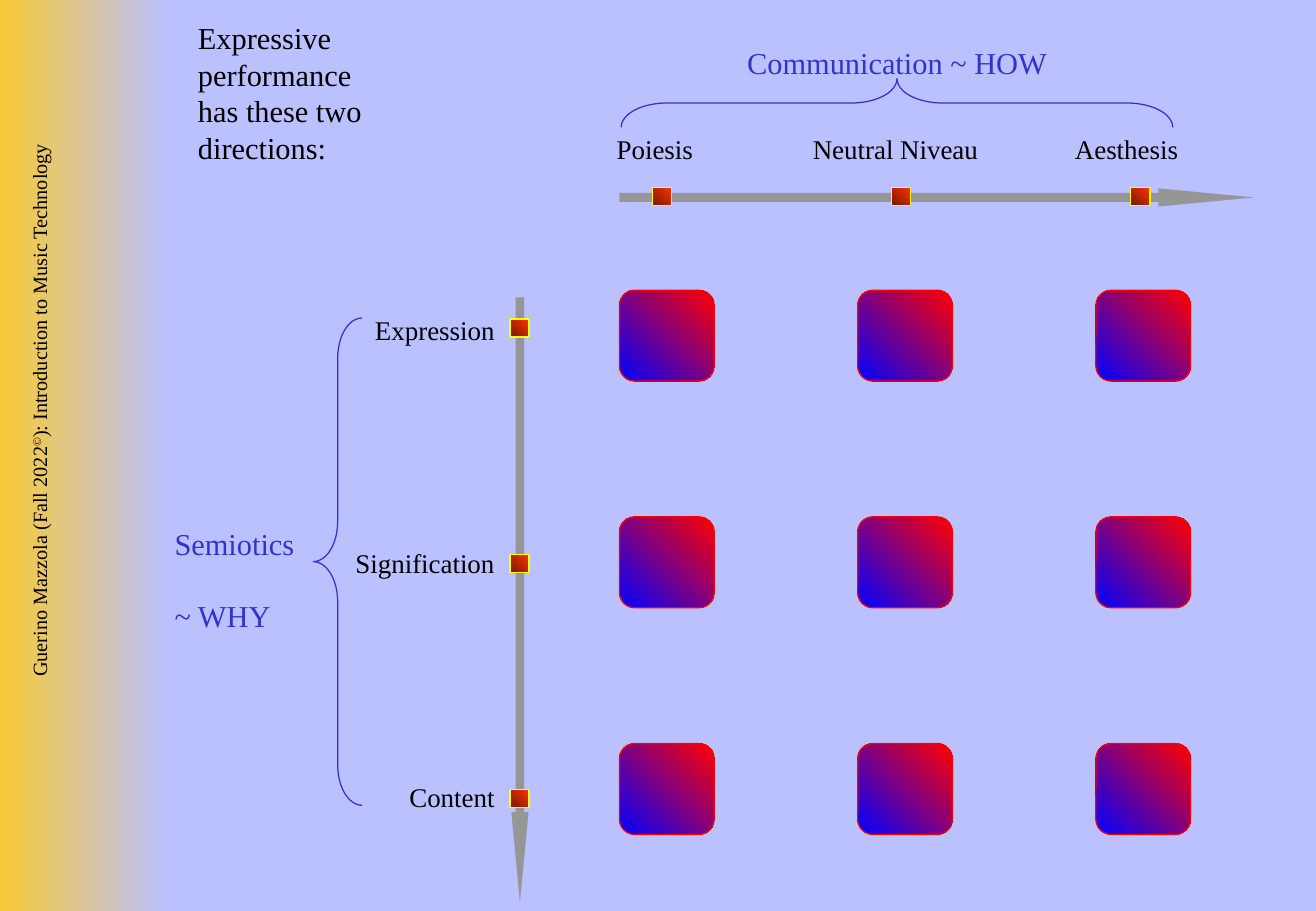
from lxml.etree import SubElement
from pptx import Presentation
from pptx.dml.color import RGBColor
from pptx.enum.shapes import MSO_SHAPE as Geo
from pptx.enum.text import PP_ALIGN as Align
from pptx.oxml.ns import qn
from pptx.util import Cm, Pt

FONT = "Times New Roman"
BACK, BLACK, BLUE, GREY = "BBC0FF", "000000", "3333CC", "969696"


def tint(color, code):
    """Set a colour from a hex string."""
    color.rgb = RGBColor.from_string(code)


def blend(fill, start, end, angle):
    """Fill with a linear gradient of two colours."""
    fill.gradient()
    fill.gradient_angle = angle
    for stop, code in zip(fill.gradient_stops, (start, end)):
        tint(stop.color, code)


def solid(fill, code):
    """Fill with one colour."""
    fill.solid()
    tint(fill.fore_color, code)


def shape(slide, geo, box, line=None, adjust=()):
    """Add a preset shape without shadow, with an optional thin outline."""
    item = slide.shapes.add_shape(geo, *map(Cm, box))
    item.shadow.inherit = False
    for i, value in enumerate(adjust):
        item.adjustments[i] = value
    if line:
        tint(item.line.color, line)
        item.line.width = Pt(0.75)
    else:
        item.line.fill.background()
    return item


def write(para, text, size, code=BLACK):
    """Add one run to a paragraph and return it."""
    run = para.add_run()
    run.text = text
    run.font.name = FONT
    run.font.size = Pt(size)
    tint(run.font.color, code)
    return run


def label(slide, box, text="", size=16, align=Align.LEFT):
    """Add a wrapped text box and return it."""
    item = slide.shapes.add_textbox(*map(Cm, box))
    frame = item.text_frame
    frame.word_wrap = True
    para = frame.paragraphs[0]
    para.alignment = align
    if text:
        write(para, text, size)
    return item


def heading(slide, box, lines):
    """Add a blue heading on a half-transparent panel."""
    item = slide.shapes.add_textbox(*map(Cm, box))
    solid(item.fill, BACK)
    hue = item.fill._xPr.find(qn("a:solidFill"))[0]
    SubElement(hue, qn("a:alpha")).set("val", "50000")
    frame = item.text_frame
    frame.word_wrap = False
    for i, text in enumerate(lines):
        para = frame.add_paragraph() if i else frame.paragraphs[0]
        if i:
            para.space_before = Pt(21)
        write(para, text, 18, BLUE)


def brace(slide, box, bend, turn=0):
    """Add a blue curly brace."""
    item = shape(slide, Geo.LEFT_BRACE, box, BLUE, (bend, 0.5))
    item.fill.background()
    item.rotation = turn


def arrow(slide, geo, box):
    """Add a long grey arrow."""
    solid(shape(slide, geo, box, adjust=(0.49, 5.24)).fill, GREY)


def marker(slide, x, y):
    """Add a small red marker on an axis."""
    item = shape(slide, Geo.FLOWCHART_PROCESS, (x, y, 0.4, 0.38), "FFFF00")
    blend(item.fill, "761800", "FF3300", 45)


def sidebar(slide, x, y, w, h):
    """Draw the yellow band with the upright course title."""
    blend(shape(slide, Geo.RECTANGLE, (x, y, w, h)).fill, "FFCB1F", BACK, 0)
    item = label(slide, (x - 5.72, y + 9.3, 14.35, 1.27), align=Align.RIGHT)
    item.rotation = 270
    para = item.text_frame.paragraphs[0]
    write(para, "Guerino Mazzola (Fall 2022", 12)
    mark = write(para, "©", 12)
    mark._r.get_or_add_rPr().set("baseline", "30000")
    write(para, "): Introduction to Music Technology", 12)


def how(slide, x, y):
    """Draw the horizontal axis of communication."""
    heading(slide, (x + 2.42, y, 6.78, 1.02), ["Communication ~ HOW"])
    brace(slide, (x + 5.29, y - 4.4, 1.02, 11.53), 0.935, 90)
    arrow(slide, Geo.RIGHT_ARROW, (x, y + 3.15, 13.26, 0.38))
    names = [("Poiesis", 0.74), ("Neutral Niveau", 5.77), ("Aesthesis", 10.6)]
    for i, (name, mid) in enumerate(names):
        label(slide, (x + mid - 2.25, y + 1.85, 4.5, 0.94), name,
              align=Align.CENTER)
        marker(slide, x + 0.69 + 5 * i, y + 3.13)


def why(slide, x, y):
    """Draw the vertical axis of semiotics."""
    heading(slide, (x, y + 4.63, 3.05, 1.8), ["Semiotics", "~ WHY"])
    brace(slide, (x + 3.15, y + 0.43, 1.02, 10.19), 0.825)
    arrow(slide, Geo.DOWN_ARROW, (x + 7.29, y, 0.36, 12.65))
    for i, name in enumerate(["Expression", "Signification", "Content"]):
        label(slide, (x + 3.59, y + 0.21 + 4.88 * i, 3.6, 0.94), name,
              align=Align.RIGHT)
        marker(slide, x + 7.26, y + 0.45 + 4.92 * i)


def grid(slide, x, y, w, h):
    """Draw the three by three tiles that fill the box."""
    wide, high = 1.98, 1.9
    for col in range(3):
        for row in range(3):
            box = (x + col * (w - wide) / 2, y + row * (h - high) / 2,
                   wide, high)
            item = shape(slide, Geo.ROUNDED_RECTANGLE, box, "FF0000")
            blend(item.fill, "0000FF", "FF0000", 45)


def main():
    """Build the slide and save it."""
    deck = Presentation()
    deck.slide_width, deck.slide_height = Cm(27.51), Cm(19.05)
    slide = deck.slides.add_slide(deck.slide_layouts[6])
    solid(slide.background.fill, BACK)
    sidebar(slide, -0.38, 0, 3.91, 19.05)
    intro = "Expressive performance has these two directions:"
    label(slide, (3.89, 0.28, 4.37, 3.3), intro, 18)
    why(slide, 3.4, 6.22)
    how(slide, 12.95, 0.79)
    grid(slide, 12.95, 6.07, 11.94, 11.38)
    deck.save("out.pptx")


if __name__ == "__main__":
    main()
